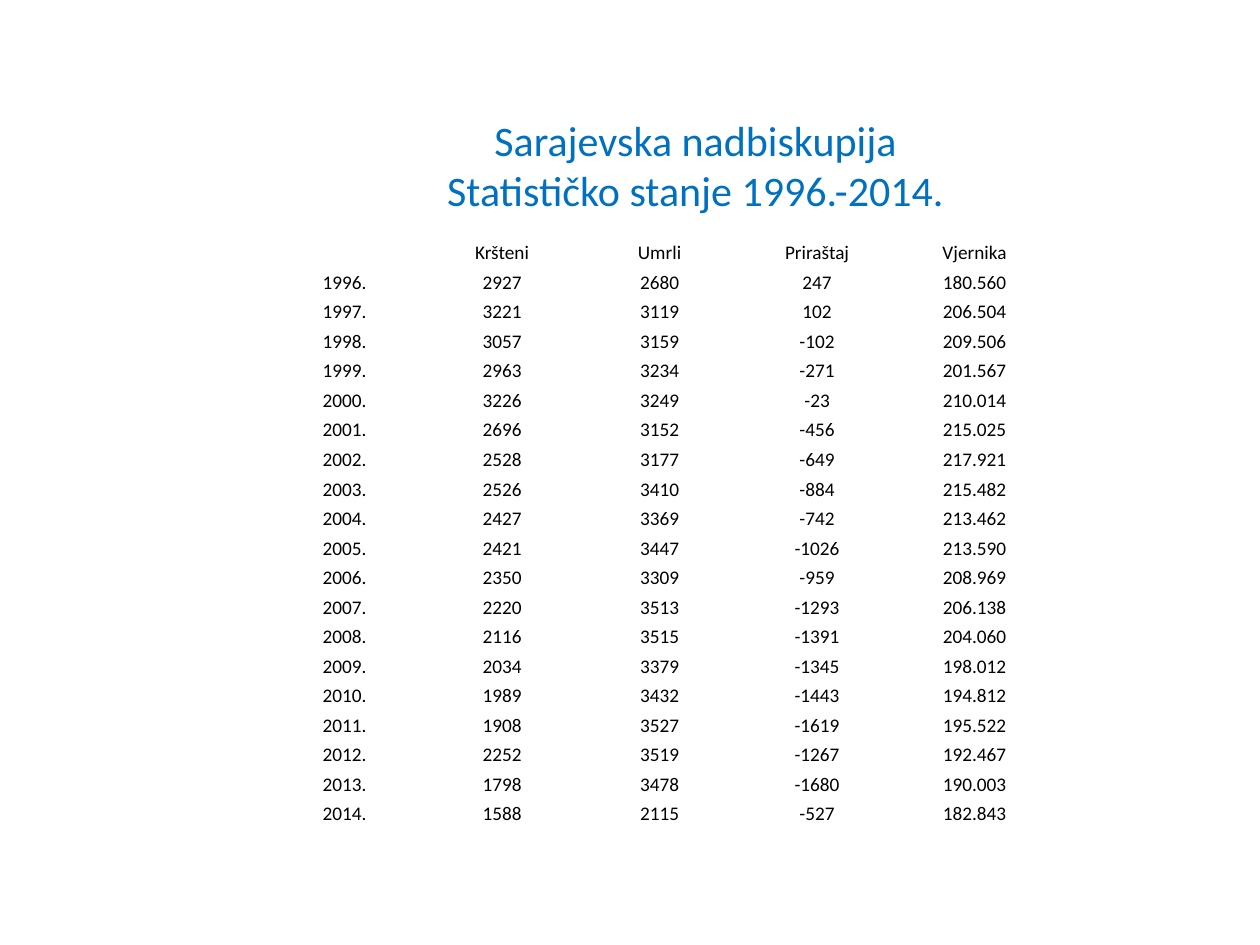
from pptx import Presentation
from pptx.dml.color import RGBColor
from pptx.enum.text import MSO_ANCHOR, PP_ALIGN
from pptx.util import Inches, Pt

CENTER = PP_ALIGN.CENTER
MIDDLE = MSO_ANCHOR.MIDDLE
BOTTOM = MSO_ANCHOR.BOTTOM

TITLE_LINES = ["Sarajevska nadbiskupija", "Statističko stanje 1996.-2014."]
HEADER = ["", "Kršteni", "Umrli", "Priraštaj", "Vjernika"]
FIRST_YEAR = 1996
# Baptised, deceased, growth, faithful
YEARLY_FIGURES = [
    ("2927", "2680", "247", "180.560"),
    ("3221", "3119", "102", "206.504"),
    ("3057", "3159", "-102", "209.506"),
    ("2963", "3234", "-271", "201.567"),
    ("3226", "3249", "-23", "210.014"),
    ("2696", "3152", "-456", "215.025"),
    ("2528", "3177", "-649", "217.921"),
    ("2526", "3410", "-884", "215.482"),
    ("2427", "3369", "-742", "213.462"),
    ("2421", "3447", "-1026", "213.590"),
    ("2350", "3309", "-959", "208.969"),
    ("2220", "3513", "-1293", "206.138"),
    ("2116", "3515", "-1391", "204.060"),
    ("2034", "3379", "-1345", "198.012"),
    ("1989", "3432", "-1443", "194.812"),
    ("1908", "3527", "-1619", "195.522"),
    ("2252", "3519", "-1267", "192.467"),
    ("1798", "3478", "-1680", "190.003"),
    ("1588", "2115", "-527", "182.843"),
]


def color(hex_value):
    return RGBColor.from_string(hex_value)


class StatisticsPage:
    font_name = "Calibri"
    title_size, title_color = 24, "0070C0"
    table_size, table_color = 11, "000000"

    def __init__(self, deck):
        self.page = deck.slides.add_slide(deck.slide_layouts[6])

    def add_span(self, para, text, size, hex_value):
        span = para.add_run()
        span.text = text
        span.font.name = self.font_name
        span.font.size = Pt(size)
        span.font.bold = False
        span.font.color.rgb = color(hex_value)

    def add_title(self, lines, left, top, width, height):
        box = self.page.shapes.add_textbox(
            Inches(left), Inches(top), Inches(width), Inches(height))
        frame = box.text_frame
        frame.word_wrap = True
        frame.vertical_anchor = MIDDLE
        para = frame.paragraphs[0]
        para.alignment = CENTER
        for index, line in enumerate(lines):
            if index:
                para.add_line_break()
            self.add_span(para, line, self.title_size, self.title_color)

    def fill_cell(self, cell, text):
        cell.fill.background()
        cell.vertical_anchor = BOTTOM
        cell.margin_left = cell.margin_right = 0
        cell.margin_top = cell.margin_bottom = 0
        para = cell.text_frame.paragraphs[0]
        para.alignment = CENTER
        if text:
            self.add_span(para, text, self.table_size, self.table_color)
        else:
            # Keeps the empty cell from stretching its row
            end = para._p.get_or_add_endParaRPr()
            end.set("sz", str(self.table_size * 100))

    def add_table(self, rows, left, top, width, height):
        table = self.page.shapes.add_table(
            len(rows), len(rows[0]), Inches(left), Inches(top),
            Inches(width), Inches(height)).table
        table.first_row = table.horz_banding = False
        for row, texts in zip(table.rows, rows):
            for cell, text in zip(row.cells, texts):
                self.fill_cell(cell, text)


def main():
    deck = Presentation()
    deck.slide_width, deck.slide_height = Inches(10), Inches(7.5)
    statistics = StatisticsPage(deck)

    # Title
    statistics.add_title(TITLE_LINES, 1.26, 0.68, 8.52, 1.25)

    # One row per year below the header
    rows = [HEADER] + [[f"{year}.", *figures] for year, figures
                       in enumerate(YEARLY_FIGURES, FIRST_YEAR)]
    statistics.add_table(rows, 2.11, 1.87, 6.25, 4.69)

    deck.save("out.pptx")


if __name__ == "__main__":
    main()
